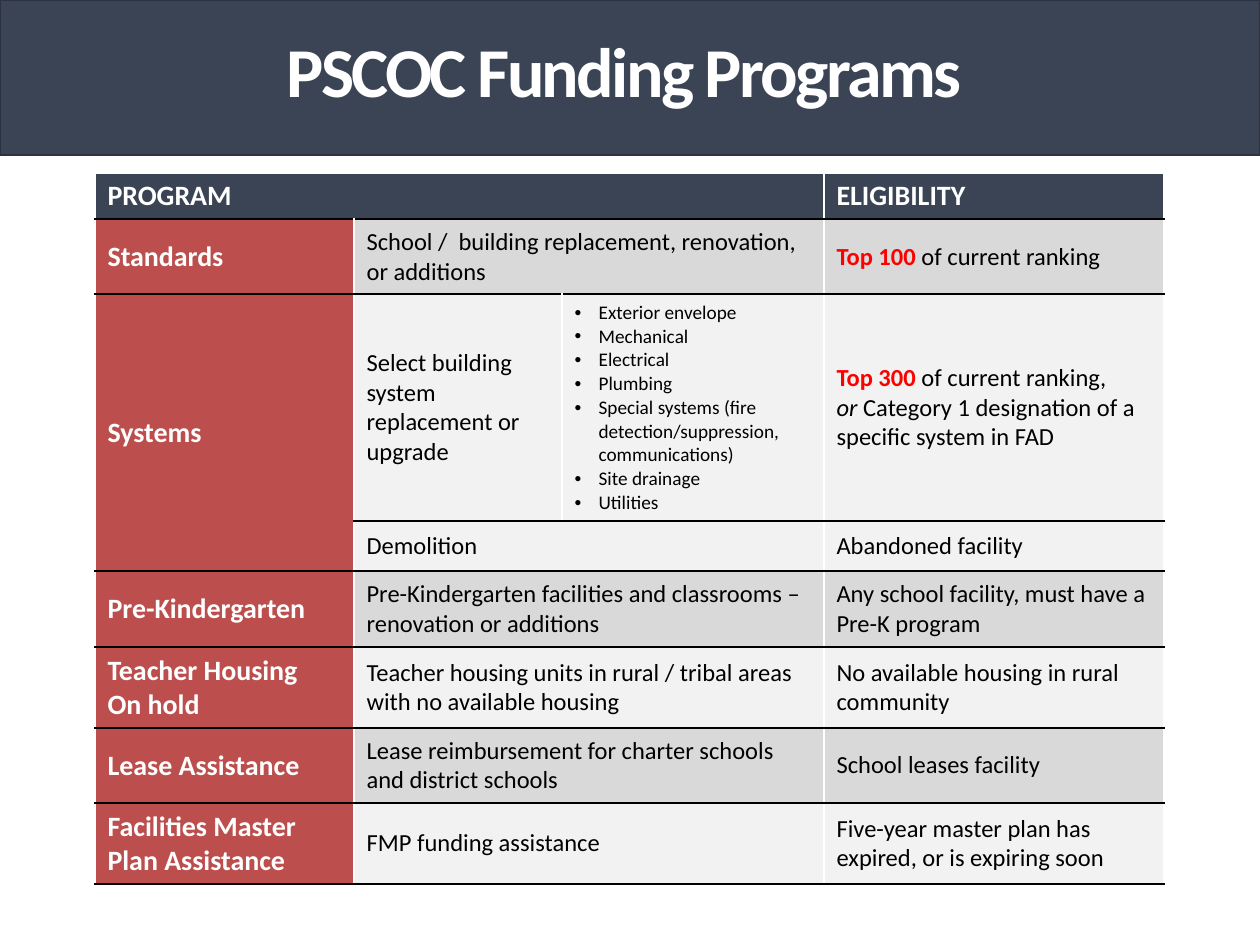
from lxml.etree import SubElement
from pptx import Presentation
from pptx.dml.color import RGBColor
from pptx.enum.shapes import MSO_SHAPE
from pptx.enum.text import MSO_ANCHOR, PP_ALIGN
from pptx.oxml.ns import qn
from pptx.util import Emu, Pt

FONT = "Calibri"
NAVY = RGBColor(0x3B, 0x44, 0x55)
NAVY_EDGE = RGBColor(0x2C, 0x32, 0x3F)
BRICK = RGBColor(0xBC, 0x4E, 0x4D)
GRAY = RGBColor(0xD9, 0xD9, 0xD9)
PALE = RGBColor(0xF2, 0xF2, 0xF2)
RED = RGBColor(0xFF, 0x00, 0x00)
BLACK = RGBColor(0x00, 0x00, 0x00)
WHITE = RGBColor(0xFF, 0xFF, 0xFF)

COLUMNS = [259, 208, 262, 340]
ROWS = [46, 75, 227, 50, 76, 81, 75, 81]

SYSTEMS = [
    "Exterior envelope",
    "Mechanical",
    "Electrical",
    "Plumbing",
    "Special systems (fire detection/suppression, communications)",
    "Site drainage",
    "Utilities",
]
TOP_100 = [[("Top 100 ", "key"), ("of current ranking", "")]]
TOP_300 = [
    [("Top 300 ", "key"), ("of current ranking,", "")],
    [("or ", "italic"), ("Category 1 designation of a specific system in FAD", "")],
]
PROGRAMS = [
    (["Standards"],
     ["School /  building replacement, renovation,", "or additions"],
     TOP_100, GRAY),
    (["Systems"], ["Select building system replacement or upgrade"], TOP_300, PALE),
    ([], ["Demolition"], ["Abandoned facility"], PALE),
    (["Pre-Kindergarten"],
     ["Pre-Kindergarten facilities and classrooms – renovation or additions"],
     ["Any school facility, must have a Pre-K program"], GRAY),
    (["Teacher Housing", "On hold"],
     ["Teacher housing units in rural / tribal areas with no available housing"],
     ["No available housing in rural community"], PALE),
    (["Lease Assistance"],
     ["Lease reimbursement for charter schools", "and district schools"],
     ["School leases facility"], GRAY),
    (["Facilities Master Plan Assistance"],
     ["FMP funding assistance"],
     ["Five-year master plan has expired, or is expiring soon"], PALE),
]
SYSTEMS_ROW = 2


def px(n):
    return Emu(round(n * 914400 / 126))


def style_font(font, size, color, bold=False):
    font.name = FONT
    font.size = Pt(size)
    font.bold = bold
    font.color.rgb = color


def add_band(s):
    sp = s.shapes.add_shape(MSO_SHAPE.RECTANGLE, 0, 0, px(1260), px(155))
    sp.shadow.inherit = False
    sp.fill.solid()
    sp.fill.fore_color.rgb = NAVY
    sp.line.color.rgb = NAVY_EDGE
    sp.line.width = Pt(1)


def add_title(s, text):
    tf = s.shapes.add_textbox(0, px(18), px(1260), px(101)).text_frame
    tf.word_wrap = True
    tf.margin_left = 0
    tf.vertical_anchor = MSO_ANCHOR.BOTTOM
    p = tf.paragraphs[0]
    p.text = text
    p.alignment = PP_ALIGN.CENTER
    p.line_spacing = 0.9
    r = p.runs[0]
    style_font(r.font, 40, WHITE, True)
    r.font._element.set("spc", "-150")


def set_borders(cell, top):
    tcPr = cell._tc.get_or_add_tcPr()
    for side, color in (("L", WHITE), ("R", WHITE), ("T", top), ("B", BLACK)):
        ln = SubElement(tcPr, qn(f"a:ln{side}"), w=str(Pt(1)))
        fill = SubElement(ln, qn("a:solidFill"))
        SubElement(fill, qn("a:srgbClr"), val=str(color))


def add_bullet(p):
    pPr = p._p.get_or_add_pPr()
    pPr.set("marL", str(px(24)))
    pPr.set("indent", str(-px(24)))
    SubElement(pPr, qn("a:buFont"), typeface="Arial")
    SubElement(pPr, qn("a:buChar"), char="•")


def fill_cell(cell, paragraphs, size, color, bold=False, bullets=False):
    cell.vertical_anchor = MSO_ANCHOR.MIDDLE
    tf = cell.text_frame
    for i, content in enumerate(paragraphs):
        p = tf.paragraphs[0] if i == 0 else tf.add_paragraph()
        if bullets:
            add_bullet(p)
        runs = [(content, "")] if isinstance(content, str) else content
        for text, emphasis in runs:
            r = p.add_run()
            r.text = text
            key = emphasis == "key"
            style_font(r.font, size, RED if key else color, bold or key)
            r.font.italic = emphasis == "italic"


def paint_cell(cell, color, top=BLACK):
    set_borders(cell, top)
    cell.fill.solid()
    cell.fill.fore_color.rgb = color


def add_program_table(s):
    frame = s.shapes.add_table(len(ROWS), len(COLUMNS), px(95), px(173),
                               px(sum(COLUMNS)), px(sum(ROWS)))
    table = frame.table
    for column, width in zip(table.columns, COLUMNS):
        column.width = px(width)
    for row, height in zip(table.rows, ROWS):
        row.height = px(height)

    for c in range(len(COLUMNS)):
        paint_cell(table.cell(0, c), NAVY, WHITE)
    table.cell(0, 0).merge(table.cell(0, 2))
    fill_cell(table.cell(0, 0), ["PROGRAM"], 16, WHITE, True)
    fill_cell(table.cell(0, 3), ["ELIGIBILITY"], 16, WHITE, True)

    for i, (name, scope, eligibility, shade) in enumerate(PROGRAMS, 1):
        for c in range(len(COLUMNS)):
            paint_cell(table.cell(i, c), shade if c else BRICK)
        if i != SYSTEMS_ROW:
            table.cell(i, 1).merge(table.cell(i, 2))
        fill_cell(table.cell(i, 0), name, 16, WHITE, True)
        fill_cell(table.cell(i, 1), scope, 14, BLACK)
        fill_cell(table.cell(i, 3), eligibility, 14, BLACK)

    table.cell(SYSTEMS_ROW, 0).merge(table.cell(SYSTEMS_ROW + 1, 0))
    fill_cell(table.cell(SYSTEMS_ROW, 2), SYSTEMS, 11, BLACK, bullets=True)


def main():
    prs = Presentation()
    prs.slide_width = px(1260)
    prs.slide_height = px(945)
    s = prs.slides.add_slide(prs.slide_layouts[6])
    add_band(s)
    add_title(s, "PSCOC Funding Programs")
    add_program_table(s)
    prs.save("out.pptx")


if __name__ == "__main__":
    main()
